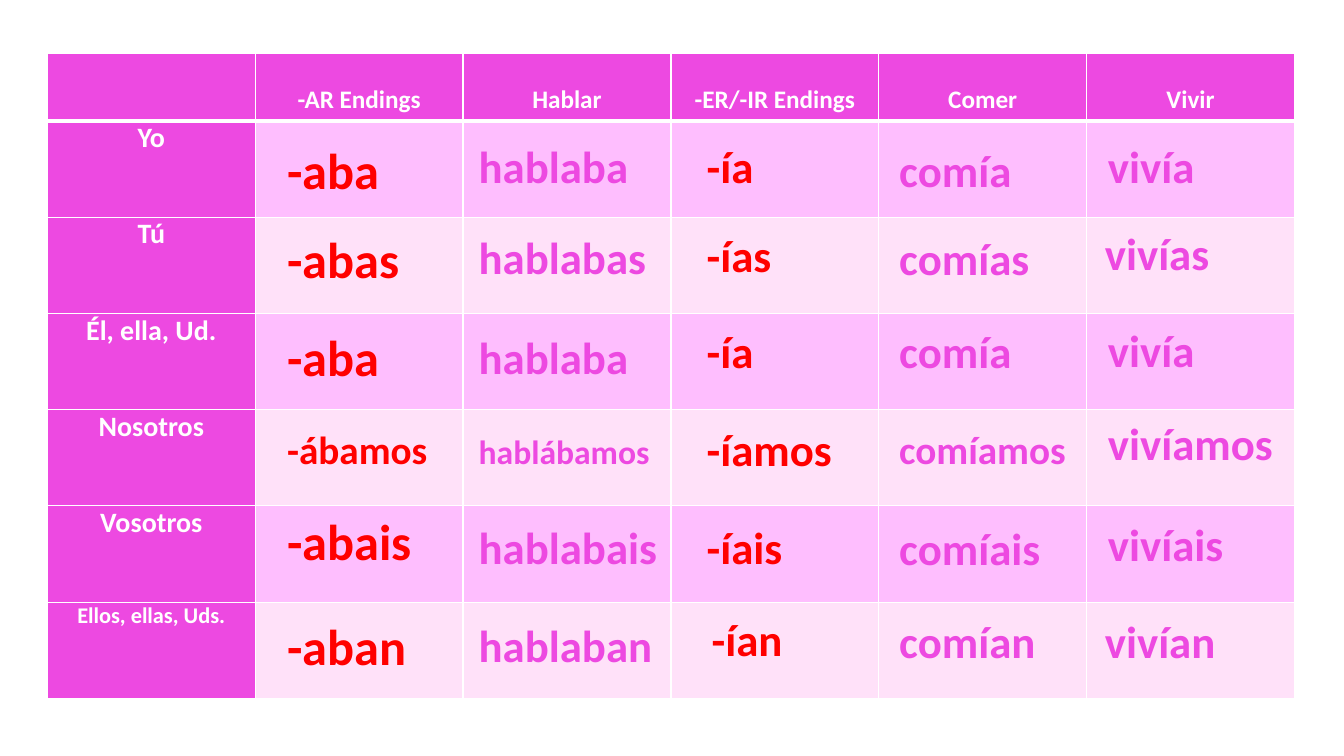
from pptx import Presentation
from pptx.dml.color import RGBColor
from pptx.enum.text import MSO_AUTO_SIZE, PP_ALIGN
from pptx.oxml.ns import qn
from pptx.util import Inches, Pt
from lxml.etree import SubElement

COLORS = {
    "white": "FFFFFF",
    "magenta": "ED49E1",
    "pink": "FEBEFE",
    "pale": "FFE1F9",
    "red": "FF0000",
}
HEADINGS = ["", "-AR Endings", "Hablar", "-ER/-IR Endings", "Comer", "Vivir"]
PRONOUNS = ["Yo", "Tú", "Él, ella, Ud.", "Nosotros", "Vosotros", "Ellos, ellas, Uds."]
TABLE_WIDTH, TABLE_HEIGHT, HEADER_HEIGHT = 12.37, 6.4, 0.67

# Each column: left, width, size, color, then (word, top) by person.
ENDINGS = [
    (2.75, 1.77, 36, "red", [("-aba", 1.33), ("-abas", 2.21), ("-aba", 3.19),
                             ("-ábamos", 4.17), ("-abais", 5.01), ("-aban", 6.05)]),
    (4.65, 2.03, 32, "magenta", [("hablaba", 1.33), ("hablabas", 2.23), ("hablaba", 3.22),
                                 ("hablábamos", 4.23), ("hablabais", 5.11), ("hablaban", 6.08)]),
    (6.91, 1.91, 32, "red", [("-ía", 1.33), ("-ías", 2.21), ("-ía", 3.16),
                             ("-íamos", 4.13), ("-íais", 5.11), ("-ían", 6.02)]),
    (8.82, 2.05, 32, "magenta", [("comía", 1.37), ("comías", 2.24), ("comía", 3.16),
                                 ("comíamos", 4.17), ("comíais", 5.12), ("comían", 6.04)]),
    (10.89, 1.91, 32, "magenta", [("vivía", 1.33), ("vivías", 2.19), ("vivía", 3.15),
                                  ("vivíamos", 4.07), ("vivíais", 5.08), ("vivían", 6.04)]),
]
SMALLER = {"-ábamos": 28, "hablábamos": 24, "comíamos": 28}
SHIFTED_LEFT = {"-ían": 6.96, "vivías": 10.86, "vivían": 10.86}


class ConjugationSlide:
    def __init__(self, page, font="Calibri"):
        self.page = page
        self.font = font

    def style(self, para, size, color):
        para.font.name = self.font
        para.font.size = Pt(size)
        para.font.bold = True
        para.font.color.rgb = RGBColor.from_string(COLORS[color])

    def word(self, text, left, top, width, size, color):
        height = (size * 1.22 + 7.2) / 72
        box = self.page.shapes.add_textbox(Inches(left), Inches(top), Inches(width), Inches(height))
        frame = box.text_frame
        frame.word_wrap = True
        frame.auto_size = MSO_AUTO_SIZE.SHAPE_TO_FIT_TEXT
        frame.text = text
        self.style(frame.paragraphs[0], size, color)

    def borders(self, cell, top=1, bottom=1):
        properties = cell._tc.get_or_add_tcPr()
        for side, points in (("L", 1), ("R", 1), ("T", top), ("B", bottom)):
            line = SubElement(properties, qn(f"a:ln{side}"), w=str(Pt(points)))
            fill = SubElement(line, qn("a:solidFill"))
            SubElement(fill, qn("a:srgbClr"), val=COLORS["white"])

    def label(self, cell, text, size, spacing=None):
        cell.margin_left = cell.margin_right = Inches(0.07)
        cell.margin_top = cell.margin_bottom = 0
        cell.text = text
        para = cell.text_frame.paragraphs[0]
        para.alignment = PP_ALIGN.CENTER
        para.line_spacing = spacing
        self.style(para, size, "white")

    def table(self, left, top):
        row_count, column_count = len(PRONOUNS) + 1, len(HEADINGS)
        table = self.page.shapes.add_table(
            row_count, column_count, Inches(left), Inches(top),
            Inches(TABLE_WIDTH), Inches(TABLE_HEIGHT)).table
        for column in table.columns:
            column.width = Inches(TABLE_WIDTH / column_count)
        for r, row in enumerate(table.rows):
            row.height = Inches((TABLE_HEIGHT - HEADER_HEIGHT) / len(PRONOUNS) if r else HEADER_HEIGHT)
            for c, cell in enumerate(row.cells):
                self.borders(cell, top=3 if r == 1 else 1, bottom=3 if r == 0 else 1)
                color = "magenta" if r == 0 or c == 0 else "pink" if r % 2 else "pale"
                cell.fill.solid()
                cell.fill.fore_color.rgb = RGBColor.from_string(COLORS[color])
                if r == 0 and HEADINGS[c]:
                    self.label(cell, HEADINGS[c], 18, spacing=2.0)
                elif r and c == 0:
                    self.label(cell, PRONOUNS[r - 1], 16 if r == len(PRONOUNS) else 20)


def main():
    deck = Presentation()
    deck.slide_width, deck.slide_height = Inches(13.33), Inches(7.5)
    slide = ConjugationSlide(deck.slides.add_slide(deck.slide_layouts[6]))
    slide.table(0.47, 0.53)
    for left, width, size, color, words in ENDINGS:
        for text, top in words:
            slide.word(text, SHIFTED_LEFT.get(text, left), top, width,
                       SMALLER.get(text, size), color)
    deck.save("out.pptx")


if __name__ == "__main__":
    main()
